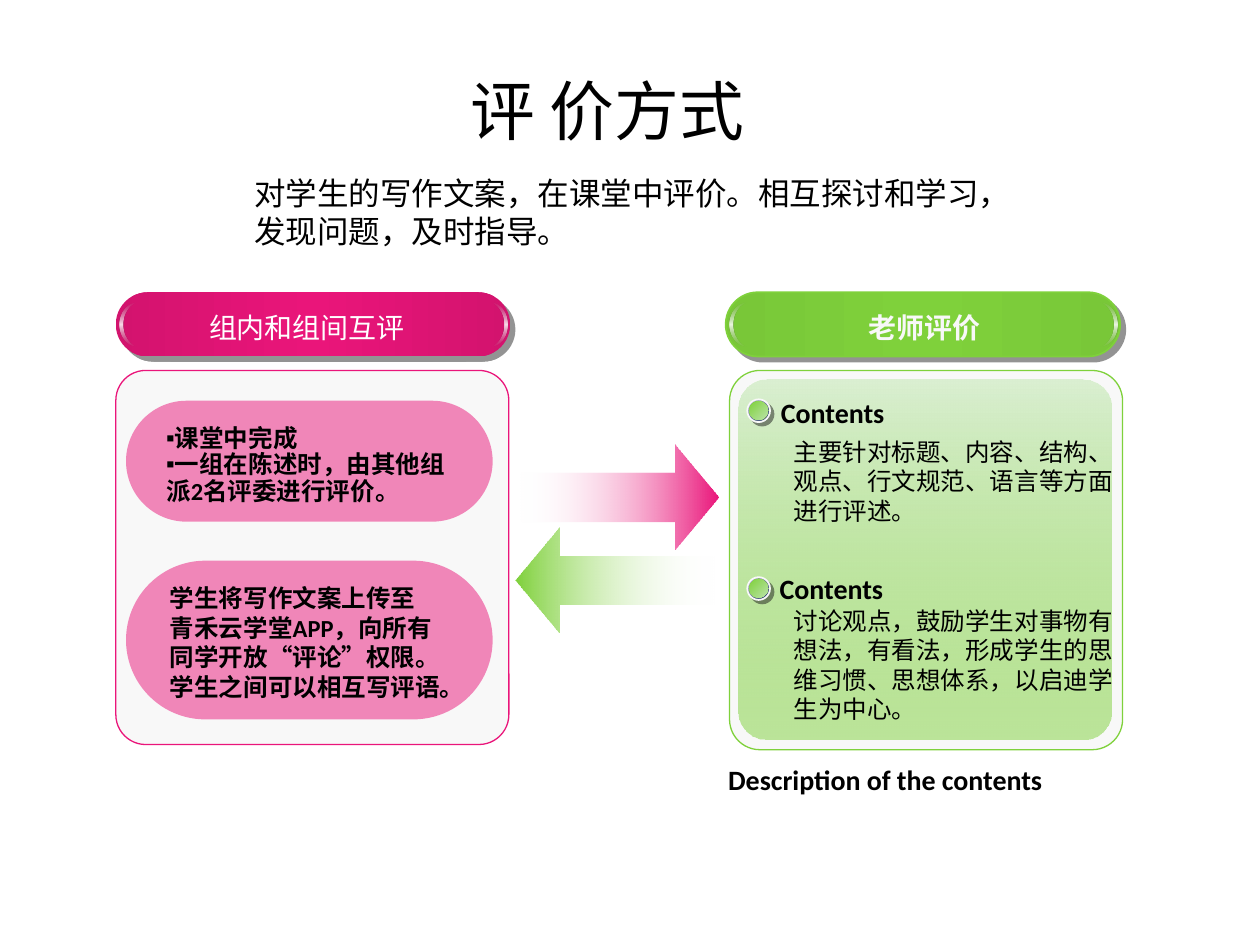
from dataclasses import dataclass

from lxml.etree import SubElement
from pptx import Presentation
from pptx.dml.color import RGBColor
from pptx.enum.shapes import MSO_SHAPE as Kind
from pptx.enum.text import MSO_ANCHOR as Anchor, MSO_AUTO_SIZE as Fit, PP_ALIGN as Align
from pptx.oxml import parse_xml
from pptx.oxml.ns import nsdecls, qn
from pptx.util import Pt


@dataclass(frozen=True)
class Theme:
    font: str = "Calibri"
    cjk_font: str = "Noto Sans CJK SC"
    black: str = "000000"
    white: str = "FFFFFF"
    paper: str = "F8F8F8"
    pink: str = "EA157A"
    dark_pink: str = "D3136E"
    green: str = "7FD13B"
    dark_green: str = "79C738"
    mint: str = "DAEFD1"
    soft_green: str = "BBE3A9"
    gloss: str = "B6B6B6"
    rim_light: str = "C0C6D3"
    rim_dark: str = "223864"
    header_shadow: str = "292929"
    bead_shadow: str = "1C1C1C"
    title: int = 37
    intro: int = 18
    heading: int = 16
    body: int = 14


theme = Theme()
deck = Presentation()
deck.slide_width, deck.slide_height = Pt(720), Pt(540)
page = deck.slides.add_slide(deck.slide_layouts[1])


def draw(kind, box, *stops, angle=0, line=None, weight=1, adjust=(), shadow=None):
    """Add a shape; stops are evenly spaced (colour, opacity %) pairs, one meaning a flat fill."""
    shape = page.shapes.add_shape(kind, *(Pt(length) for length in box))
    for index, value in enumerate(adjust):
        shape.adjustments[index] = value
    colours = [f'<a:srgbClr val="{colour}"><a:alpha val="{opacity * 1000}"/></a:srgbClr>'
               for colour, opacity in stops]
    if len(colours) == 1:
        fill = f'<a:solidFill {nsdecls("a")}>{colours[0]}</a:solidFill>'
    else:
        step = 100000 // (len(colours) - 1)
        marks = "".join(f'<a:gs pos="{i * step}">{colour}</a:gs>' for i, colour in enumerate(colours))
        fill = (f'<a:gradFill {nsdecls("a")} rotWithShape="1"><a:gsLst>{marks}</a:gsLst>'
                f'<a:lin ang="{angle * 60000}" scaled="0"/></a:gradFill>')
    properties = shape.element.spPr
    properties.find(qn("a:prstGeom")).addnext(parse_xml(fill))
    if line:
        shape.line.color.rgb = RGBColor.from_string(line)
        shape.line.width = Pt(weight)
    else:
        shape.line.fill.background()
    shape.shadow.inherit = False
    if shadow:
        colour, distance = shadow
        properties.find(qn("a:effectLst")).append(parse_xml(
            f'<a:outerShdw {nsdecls("a")} blurRad="0" dist="{Pt(distance)}" dir="2700000" algn="ctr" '
            f'rotWithShape="0"><a:srgbClr val="{colour}"><a:alpha val="50000"/></a:srgbClr></a:outerShdw>'))
    return shape


def write(lines, box, size, font=theme.font, colour=theme.black, bold=False, align=Align.LEFT,
          anchor=Anchor.TOP, wrap=True, spacing=1.0, bullets=None, holder=None):
    """Put lines in a new text box, or in the placeholder given as holder."""
    holder = holder or page.shapes.add_textbox(0, 0, 0, 0)
    holder.left, holder.top, holder.width, holder.height = (Pt(length) for length in box)
    frame = holder.text_frame
    frame.auto_size, frame.word_wrap, frame.vertical_anchor = Fit.NONE, wrap, anchor
    for index, line in enumerate(lines):
        para = frame.add_paragraph() if index else frame.paragraphs[0]
        para.alignment, para.line_spacing, para.space_before = align, spacing, Pt(0)
        if bullets:
            settings = para._p.get_or_add_pPr()
            settings.set("marL", "0")
            settings.set("indent", "0")
            if bullets[index]:
                SubElement(settings, qn("a:buChar")).set("char", bullets[index])
            else:
                SubElement(settings, qn("a:buNone"))
        span = para.add_run()
        span.text = line
        span.font.name, span.font.size, span.font.bold = font, Pt(size), bold
        span.font.color.rgb = RGBColor.from_string(colour)


write(["评 价方式"], (62, 40.3, 570.2, 44.6), theme.title, align=Align.CENTER,
      anchor=Anchor.MIDDLE, holder=page.shapes.title)
write(["对学生的写作文案，在课堂中评价。相互探讨和学习，发现问题，及时指导。"],
      (138.2, 95.8, 462.2, 51), theme.intro)

# Panels
for left, height, colour in ((416.9, 216.7, theme.green), (66.2, 213.8, theme.pink)):
    draw(Kind.ROUNDED_RECTANGLE, (left, 211.7, 224.6, height), (theme.paper, 100),
         line=colour, weight=0.75, adjust=[0.08])
draw(Kind.ROUNDED_RECTANGLE, (421.9, 216.7, 213.1, 205.9), (theme.mint, 100), (theme.green, 50),
     angle=90, adjust=[0.08])

# Glossy headers
headers = (
    (66.2, "组内和组间互评", theme.pink, theme.dark_pink, None, 87.1, theme.cjk_font, theme.white, False),
    (414.7, "老师评价", theme.green, theme.dark_green, theme.green, 439.9, theme.font, theme.paper, True),
)
for left, label, light, dark, line, text_left, font, colour, bold in headers:
    draw(Kind.ROUNDED_RECTANGLE, (left, 167, 225.4, 36.7), (dark, 100), (light, 100), (dark, 100),
         line=line, adjust=[0.5], shadow=(theme.header_shadow, 4.2))
    for offset, turn in ((2.2, 0), (213.8, 180)):
        moon = draw(Kind.MOON, (left + offset, 172.8, 10.1, 25.2), (theme.gloss, 0),
                    (theme.white, 84), (theme.gloss, 0), angle=90, adjust=[0.22])
        moon.rotation = turn
    write([label], (text_left, 173.5, 176.4, 26.6), theme.heading, font=font, colour=colour,
          bold=bold, align=Align.CENTER, anchor=Anchor.MIDDLE)

# Exchange arrows
clear = (theme.white, 0)
draw(Kind.RIGHT_ARROW, (296.6, 254.2, 113.8, 59.8), clear, (theme.pink, 100), adjust=[0.465, 0.421])
draw(Kind.LEFT_ARROW, (294.5, 301.7, 113.8, 59.8), (theme.green, 100), clear, adjust=[0.465, 0.421])

# Teacher review
reviews = (
    (228.2, 222.5, 435.6, 246.2, "主要针对标题、内容、结构、观点、行文规范、语言等方面进行评述。"),
    (329.8, 323.3, 434.9, 342.7, "讨论观点，鼓励学生对事物有想法，有看法，形成学生的思维习惯、思想体系，以启迪学生为中心。"),
)
for bead_top, heading_top, heading_left, text_top, text in reviews:
    draw(Kind.OVAL, (427, bead_top, 13, 13), (theme.rim_light, 100), (theme.rim_dark, 100),
         angle=45, line=theme.paper, shadow=(theme.bead_shadow, 2.8))
    draw(Kind.OVAL, (428.1, bead_top + 1, 10.8, 10.8), (theme.green, 100), (theme.soft_green, 100), angle=45)
    write([" Contents"], (heading_left, heading_top, 88.6, 26.6), theme.heading, bold=True, wrap=False)
    write([text], (446.4, text_top, 198, 74.9), theme.body)
write(["Description of the contents"], (409, 432, 221.8, 26.6), theme.heading, bold=True, wrap=False)

# Peer review
for top, height in ((229, 69.1), (320.4, 90.7)):
    draw(Kind.ROUNDED_RECTANGLE, (72, top, 209.5, height), (theme.pink, 50), adjust=[0.5])
peer_list = page.placeholders[1]
page.shapes._spTree.append(peer_list.element)  # in front of the pink pills
write(["课堂中完成", "一组在陈述时，由其他组", "派2名评委进行评价。"], (87.8, 239.8, 176.4, 53.3),
      theme.body, bold=True, wrap=False, spacing=0.9, bullets=["▪", "▪", None], holder=peer_list)
write(["学生将写作文案上传至", "青禾云学堂APP，向所有", "同学开放“评论”权限。", "学生之间可以相互写评语。"],
      (90, 329.8, 187.2, 74.9), theme.body, bold=True)

deck.save("out.pptx")
